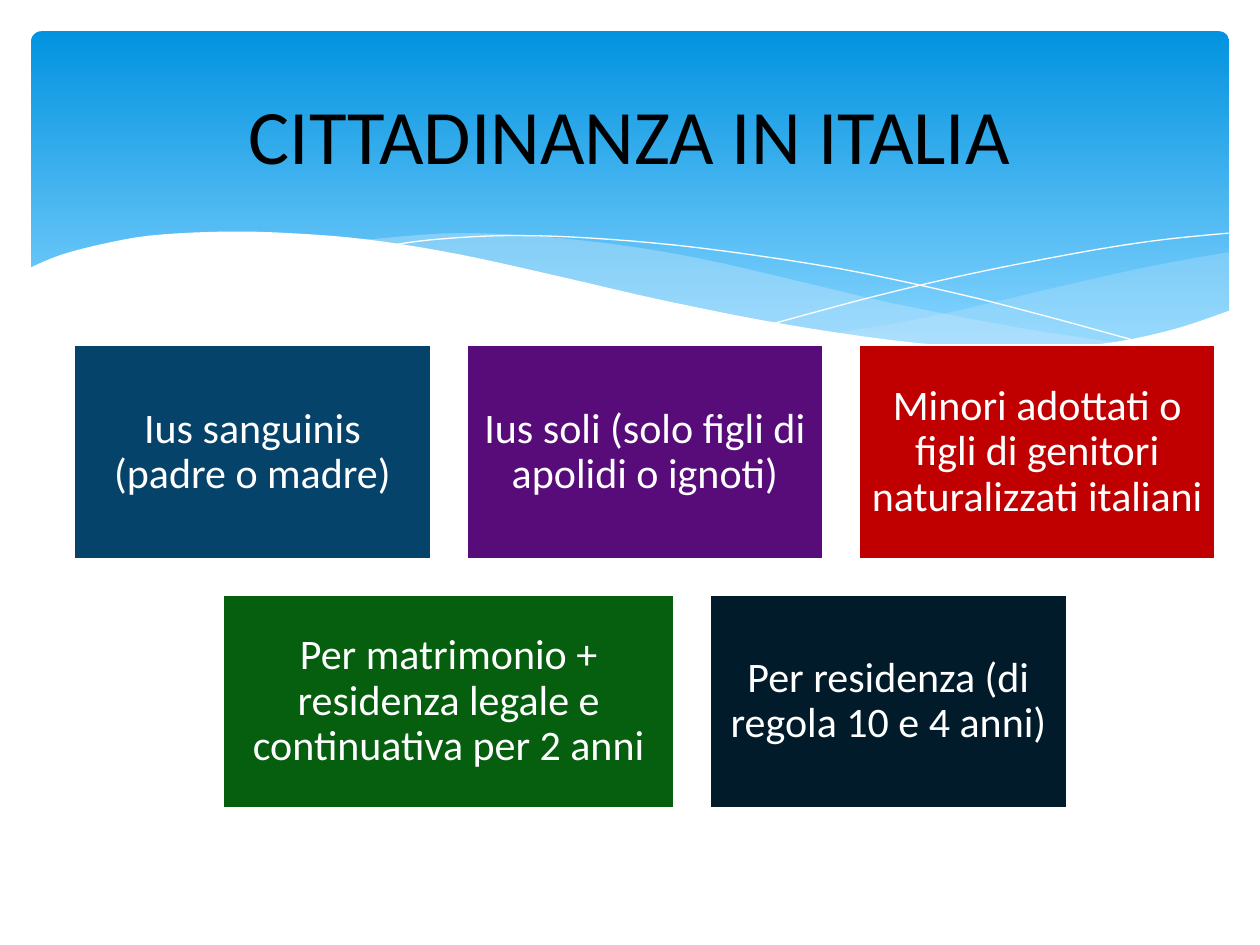
from lxml.etree import SubElement
from pptx import Presentation
from pptx.dml.color import RGBColor
from pptx.enum.shapes import MSO_SHAPE
from pptx.enum.text import MSO_ANCHOR, PP_ALIGN
from pptx.oxml.ns import qn
from pptx.util import Cm, Pt

WHITE = RGBColor(0xFF, 0xFF, 0xFF)
BLACK = RGBColor(0x00, 0x00, 0x00)
SKY_DARK = RGBColor(0x02, 0x93, 0xE0)
SKY_LIGHT = RGBColor(0x83, 0xD3, 0xFE)
WAVE = RGBColor(0xC6, 0xE7, 0xFC)
BLUE = RGBColor(0x06, 0x43, 0x6B)
PURPLE = RGBColor(0x58, 0x0C, 0x7A)
RED = RGBColor(0xC0, 0x00, 0x00)
GREEN = RGBColor(0x05, 0x5F, 0x0E)
NAVY = RGBColor(0x02, 0x1B, 0x2B)

TITLE = "CITTADINANZA IN ITALIA"
NARROW, WIDE = 7.19, 9.1
# Each row of ways to citizenship: text, colour, width in cm
ROWS = [
    [("Ius sanguinis (padre o madre)", BLUE, NARROW),
     ("Ius soli (solo figli di apolidi o ignoti)", PURPLE, NARROW),
     ("Minori adottati o figli di genitori naturalizzati italiani", RED, NARROW)],
    [("Per matrimonio + residenza legale e continuativa per 2 anni", GREEN, WIDE),
     ("Per residenza (di regola 10 e 4 anni)", NAVY, NARROW)],
]
ROWS_CENTRE, ROWS_TOP, BOX_HEIGHT, GAP = 13.0, 6.96, 4.31, 0.72

# Knots in cm that the banner's curves pass through
RIGHT_WAVE_TOP = [(24.79, 5.08), (23.39, 5.33), (21.87, 5.66), (19.79, 6.15),
                  (18.52, 6.43), (16.79, 6.73)]
RIGHT_WAVE_BOTTOM = [(16.79, 6.73), (18.26, 6.91), (19.53, 7.04), (20.68, 7.06),
                     (21.92, 6.99), (22.99, 6.83), (23.93, 6.58), (24.79, 6.27)]
LEFT_WAVE_TOP = [(22.68, 6.93), (20.5, 6.6), (17.93, 6.1), (15.98, 5.64),
                 (14.1, 5.21), (12.42, 4.93), (10.67, 4.75), (9.17, 4.7),
                 (7.95, 4.78), (7.26, 4.85)]
LEFT_WAVE_BOTTOM = [(7.26, 4.85), (9.19, 5.16), (11.4, 5.64), (13.46, 6.1),
                    (15.27, 6.48), (17.27, 6.81), (19, 7.01), (20.5, 7.06),
                    (21.77, 7.04), (22.68, 6.93)]
FALLING_LINE = [(7.85, 4.95), (8.74, 4.83), (10.19, 4.75), (11.91, 4.8),
                (14.12, 5), (16.89, 5.41), (19.3, 5.92), (21.11, 6.38),
                (23.04, 6.91)]
RISING_LINE = [(15.57, 6.53), (17.65, 5.97), (19.71, 5.49), (22, 5.05),
               (23.47, 4.83), (24.77, 4.7)]
BANNER_EDGE = [(24.82, 6.25), (23.62, 6.65), (22.23, 6.93), (20.55, 7.04),
               (18.44, 6.91), (15.9, 6.55), (13.44, 6.07), (11.35, 5.59),
               (9.27, 5.13), (7.42, 4.83), (5.84, 4.7), (4.5, 4.67),
               (3.02, 4.75), (1.93, 4.95), (1.17, 5.16), (0.58, 5.41)]
BELOW_EDGE = [(0.58, 8.36), (24.82, 8.36)]


def smooth(knots, steps=5):
    """Return points on a Catmull-Rom curve through the knots."""
    padded = [knots[0], *knots, knots[-1]]
    points = [knots[0]]
    for a, b, c, d in zip(padded, padded[1:], padded[2:], padded[3:]):
        for step in range(1, steps + 1):
            t = step / steps
            points.append(tuple(
                0.5 * (2 * q + (r - p) * t + (2 * p - 5 * q + 4 * r - s) * t ** 2
                       + (3 * q - p - 3 * r + s) * t ** 3)
                for p, q, r, s in zip(a, b, c, d)))
    return points


def add_outline(shapes, points, fill=None, opacity=100, line=None):
    """Draw a filled closed shape, or an open line when there is no fill."""
    (start_x, start_y), *rest = [(Cm(x), Cm(y)) for x, y in points]
    builder = shapes.build_freeform(start_x, start_y)
    builder.add_line_segments(rest, close=fill is not None)
    outline = builder.convert_to_shape()
    outline.shadow.inherit = False
    if fill is None:
        outline.fill.background()
        outline.line.color.rgb = line
        outline.line.width = Pt(0)
        return
    outline.fill.solid()
    outline.fill.fore_color.rgb = fill
    outline.line.fill.background()
    if opacity < 100:
        colour = outline._element.spPr.find(qn("a:solidFill"))[0]
        SubElement(colour, qn("a:alpha"), val=str(opacity * 1000))


def write(frame, text, size, color, spacing=1.0, inset=0.25):
    frame.word_wrap = True
    frame.vertical_anchor = MSO_ANCHOR.MIDDLE
    frame.margin_left = frame.margin_right = Cm(inset)
    frame.margin_top = frame.margin_bottom = Cm(inset)
    paragraph = frame.paragraphs[0]
    paragraph.alignment = PP_ALIGN.CENTER
    paragraph.line_spacing = spacing
    run = paragraph.add_run()
    run.text = text
    run.font.name = "Calibri"
    run.font.size = Pt(size)
    run.font.color.rgb = color


def add_banner(shapes):
    sky = shapes.add_shape(MSO_SHAPE.ROUNDED_RECTANGLE,
                           Cm(0.63), Cm(0.63), Cm(24.15), Cm(6.86))
    sky.adjustments[0] = 0.03
    sky.shadow.inherit = False
    sky.line.fill.background()
    sky.fill.gradient()
    sky.fill.gradient_angle = 270
    for stop, color, position in zip(sky.fill.gradient_stops,
                                     (SKY_DARK, SKY_LIGHT), (0, 0.9)):
        stop.color.rgb = color
        stop.position = position
    add_outline(shapes, smooth(RIGHT_WAVE_TOP) + smooth(RIGHT_WAVE_BOTTOM),
                fill=WAVE, opacity=29)
    add_outline(shapes, smooth(LEFT_WAVE_TOP) + smooth(LEFT_WAVE_BOTTOM),
                fill=WAVE, opacity=40)
    for knots in (FALLING_LINE, RISING_LINE):
        add_outline(shapes, smooth(knots), line=WHITE)
    add_outline(shapes, smooth(BANNER_EDGE) + BELOW_EDGE, fill=WHITE)


def add_rows(shapes):
    for index, row in enumerate(ROWS):
        top = ROWS_TOP + index * (BOX_HEIGHT + GAP)
        row_width = sum(width for _, _, width in row) + GAP * (len(row) - 1)
        left = ROWS_CENTRE - row_width / 2
        for text, color, width in row:
            box = shapes.add_shape(MSO_SHAPE.RECTANGLE, Cm(left), Cm(top),
                                   Cm(width), Cm(BOX_HEIGHT))
            box.shadow.inherit = False
            box.fill.solid()
            box.fill.fore_color.rgb = color
            box.line.color.rgb = WHITE
            box.line.width = Pt(1.25)
            write(box.text_frame, text, size=24, color=WHITE, spacing=0.9, inset=0.24)
            left += width + GAP


def main():
    deck = Presentation()
    deck.slide_width, deck.slide_height = Cm(25.4), Cm(19.05)
    shapes = deck.slides.add_slide(deck.slide_layouts[6]).shapes
    add_banner(shapes)
    add_rows(shapes)
    title = shapes.add_textbox(Cm(1.27), Cm(0.95), Cm(22.86), Cm(3.48))
    write(title.text_frame, TITLE, size=44, color=BLACK)
    deck.save("out.pptx")


if __name__ == "__main__":
    main()
